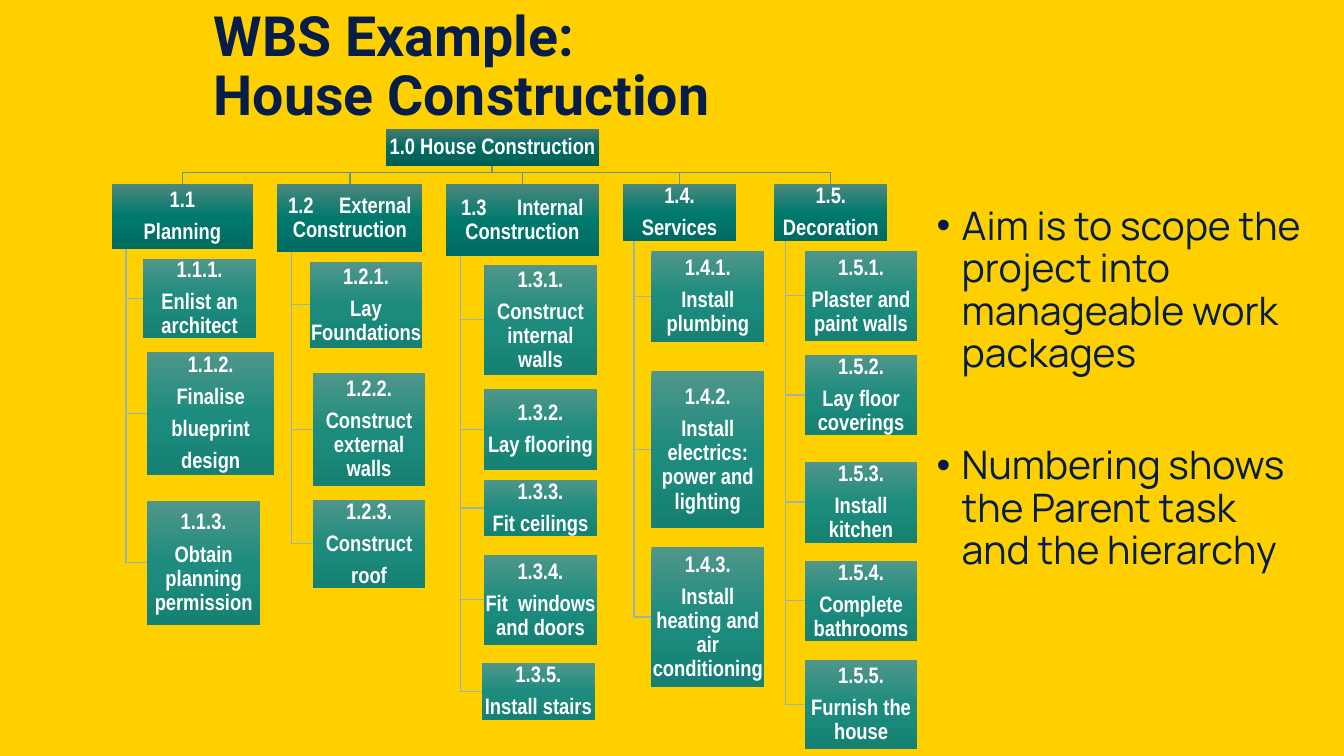
from copy import deepcopy

from pptx import Presentation
from pptx.dml.color import RGBColor
from pptx.enum.shapes import MSO_SHAPE
from pptx.enum.text import MSO_ANCHOR, PP_ALIGN
from pptx.oxml.ns import qn
from pptx.util import Emu, Pt
from lxml.etree import SubElement

PX = 9144
NAVY = "061D48"
ROOT_SHADES = ("4B7C74", "006B60", "005F55")
BRANCH_SHADES = ("4B887E", "00796D", "006B61")
TASK_SHADES = ("50968B", "1D8C7E", "168173")
BRANCH_TOP = 55
TASK_WIDTH = 112

BRANCHES = [
    (0, 140, 64, "1.1\nPlanning", 0, [
        (31, 74, 112, 78, "Enlist an architect", 0),
        (35, 166, 126, 122, "Finalise\nblueprint\ndesign", 0),
        (35, 314, 112, 123, "Obtain planning permission", 0),
    ]),
    (164, 144, 67, "1.2 External Construction", 14.6, [
        (32, 77, TASK_WIDTH, 85, "Lay Foundations", 0),
        (35, 187, TASK_WIDTH, 112, "Construct external walls", 0),
        (35, 313, TASK_WIDTH, 87, "Construct\nroof", 0),
    ]),
    (331, 152, 71, "1.3 Internal Construction", 18.2, [
        (38, 80, TASK_WIDTH, 109, "Construct internal walls", 0),
        (38, 203, TASK_WIDTH, 80, "Lay flooring", 0),
        (38, 293, TASK_WIDTH, 56, "Fit ceilings", 0),
        (38, 368, TASK_WIDTH, 89, "Fit windows and doors", 3.6),
        (36, 475, TASK_WIDTH, 56, "Install stairs", 0),
    ]),
    (507, 112, 56, "1.4.\nServices", 0, [
        (28, 66, TASK_WIDTH, 90, "Install plumbing", 0),
        (28, 185, TASK_WIDTH, 156, "Install electrics: power and lighting", 0),
        (28, 360, TASK_WIDTH, 139, "Install heating and air conditioning", 0),
    ]),
    (657, 112, 56, "1.5.\nDecoration", 0, [
        (30, 66, TASK_WIDTH, 89, "Plaster and paint walls", 0),
        (30, 169, TASK_WIDTH, 80, "Lay floor coverings", 0),
        (30, 275, TASK_WIDTH, 81, "Install kitchen", 0),
        (30, 374, TASK_WIDTH, 79, "Complete bathrooms", 0),
        (30, 472, TASK_WIDTH, 88, "Furnish the house", 0),
    ]),
]


def px(length):
    return Emu(round(length * PX))


def color(hex_string):
    return RGBColor.from_string(hex_string)


def write(frame, text, *, font, size, ink, bold=False, align=PP_ALIGN.LEFT,
          anchor=MSO_ANCHOR.TOP, insets=(10, 5), before=0, after=0,
          bullet=False, gap=0):
    frame.word_wrap = True
    frame.vertical_anchor = anchor
    frame.margin_left = frame.margin_right = px(insets[0])
    frame.margin_top = frame.margin_bottom = px(insets[1])
    for index, line in enumerate(text.split("\n")):
        paragraph = frame.add_paragraph() if index else frame.paragraphs[0]
        if bullet:
            properties = paragraph._p.get_or_add_pPr()
            properties.set("marL", str(px(25)))
            properties.set("indent", str(px(-25)))
            SubElement(properties, qn("a:buFont"), typeface="Arial")
            SubElement(properties, qn("a:buChar"), char="•")
        paragraph.alignment = align
        paragraph.line_spacing = 0.9
        paragraph.space_before = Pt(before if index else 0)
        paragraph.space_after = Pt(after)
        pieces = line.partition(" ") if gap and " " in line else (line,)
        for piece in pieces:
            for part_index, part in enumerate(piece.split("\v")):
                if part_index:
                    paragraph.add_line_break()
                run = paragraph.add_run()
                run.text = part
                run.font.name = font
                run.font.size = Pt(size)
                run.font.bold = bold
                run.font.color.rgb = color(ink)
                if gap and part == " ":
                    run._r.get_or_add_rPr().set("spc", str(round(gap * 100)))


def add_box(slide, box, text, shades, gap=0):
    card = slide.shapes.add_shape(MSO_SHAPE.RECTANGLE, *map(px, box))
    card.shadow.inherit = False
    card.line.fill.background()
    card.fill.gradient()
    card.fill.gradient_angle = 270
    stops = card._element.spPr.find(".//" + qn("a:gsLst"))
    stops.insert(1, deepcopy(stops[0]))
    for stop, shade, position in zip(card.fill.gradient_stops, shades, (0, 0.5, 1)):
        stop.color.rgb = color(shade)
        stop.position = position
    write(card.text_frame, text, font="Arial Narrow", size=16, ink="FFFFFF",
          bold=True, align=PP_ALIGN.CENTER, anchor=MSO_ANCHOR.MIDDLE,
          insets=(0, 1), after=5.6, gap=gap)


def add_link(slide, points, ink):
    outline = slide.shapes.build_freeform(*points[0], scale=float(PX))
    outline.add_line_segments(points[1:], close=False)
    link = outline.convert_to_shape()
    link.shadow.inherit = False
    link.fill.background()
    link.line.color.rgb = color(ink)
    link.line.width = Pt(1)


def add_branch(slide, box, number, label, gap, tasks):
    left, top, width, height = box
    trunk = left + round(width / 10)
    for dx, dy, _, task_height, _, _ in tasks:
        middle = top + dy + task_height // 2
        add_link(slide, [(trunk, top + height), (trunk, middle),
                         (left + dx, middle)], "97B5B0")
    add_box(slide, box, label, BRANCH_SHADES, gap)
    for order, (dx, dy, task_width, task_height, task, task_gap) in enumerate(tasks, 1):
        add_box(slide, (left + dx, top + dy, task_width, task_height),
                f"1.{number}.{order}.\n{task}", TASK_SHADES, task_gap)


def add_breakdown(slide, box):
    left, top, _, _ = box
    root = (left + 272, top, 211, 37)
    center = root[0] + root[2] // 2
    root_bottom = top + root[3]
    bus = root_bottom + 6
    branch_top = top + BRANCH_TOP
    for dx, width, *_ in BRANCHES:
        middle = left + dx + width // 2
        add_link(slide, [(center, root_bottom), (center, bus),
                         (middle, bus), (middle, branch_top)], "5E978E")
    add_box(slide, root, "1.0 House Construction", ROOT_SHADES)
    for number, (dx, width, height, label, gap, tasks) in enumerate(BRANCHES, 1):
        add_branch(slide, (left + dx, branch_top, width, height),
                   number, label, gap, tasks)


def add_title(slide, box):
    title = slide.shapes.add_textbox(*map(px, box))
    write(title.text_frame, "WBS Example:\vHouse Construction", font="Roboto",
          size=39.6, ink=NAVY, bold=True, anchor=MSO_ANCHOR.MIDDLE)


def add_aims(slide, box):
    aims = slide.shapes.add_textbox(*map(px, box))
    write(aims.text_frame,
          "Aim is to scope the project into manageable work packages\n"
          "Numbering shows the Parent task and the hierarchy",
          font="Manrope", size=28, ink="071D49", before=50, bullet=True)


def main():
    deck = Presentation()
    deck.slide_width, deck.slide_height = px(1333), px(750)
    slide = deck.slides.add_slide(deck.slide_layouts[6])
    slide.background.fill.solid()
    slide.background.fill.fore_color.rgb = color("FFD000")
    add_title(slide, (202, 7, 824, 121))
    add_aims(slide, (919, 200, 382, 441))
    add_breakdown(slide, (111, 128, 799, 615))
    deck.save("out.pptx")


if __name__ == "__main__":
    main()
